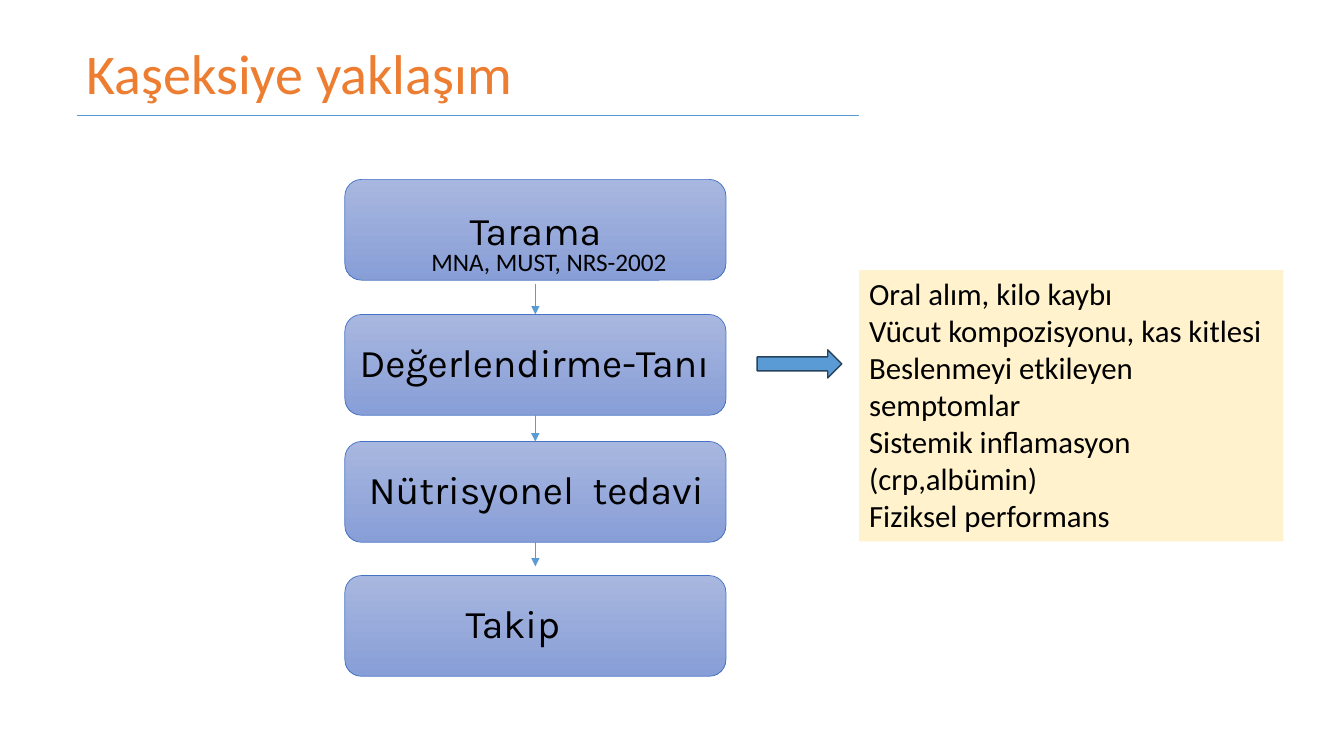
"""Build the slide on the approach to cachexia: four steps and the assessment list."""
from dataclasses import dataclass

from pptx import Presentation
from pptx.dml.color import RGBColor
from pptx.enum import shapes, text
from pptx.oxml import parse_xml
from pptx.oxml.ns import nsdecls
from pptx.util import Inches, Pt

TITLE = "Kaşeksiye yaklaşım"
TOOLS = "MNA, MUST, NRS-2002"
STEPS = [
    {"label": "Tarama", "top": 1.78, "centred": True},
    {"label": "Değerlendirme-Tanı", "top": 3.12},
    {"label": "Nütrisyonel  tedavi", "top": 4.38, "indent": 0.09},
    {"label": "Takip", "top": 5.71, "indent": 1.05},
]
ARROWS = [(2.82, 3.12), (4.12, 4.38), (5.38, 5.62)]
ASSESSMENT = [
    "Oral alım, kilo kaybı",
    "Vücut kompozisyonu, kas kitlesi",
    "Beslenmeyi etkileyen semptomlar",
    "Sistemik inflamasyon (crp,albümin)",
    "Fiziksel performans",
]
STEP_LEFT, STEP_WIDTH, STEP_HEIGHT = 3.42, 3.78, 1.0
INSET = 0.1


@dataclass(frozen=True)
class Theme:
    """Colours, fonts and type sizes of the slide."""

    ink: str = "000000"
    title: str = "ED7D31"
    accent: str = "5B9BD5"
    arrow_edge: str = "28445D"
    step_top: str = "A8B7DF"
    step_bottom: str = "889ED7"
    step_edge: str = "4472C4"
    panel: str = "FFF2CC"
    body_font: str = "Calibri"
    step_font: str = "Karla"
    title_size: int = 40
    step_size: int = 28
    list_size: int = 22
    tools_size: int = 18
    hairline: float = 0.5


THEME = Theme()


def rgb(value):
    """Return a colour from its hex value."""
    return RGBColor.from_string(value)


def place(item, left, top, width, height):
    """Move and size a placeholder in inches."""
    item.left, item.top = Inches(left), Inches(top)
    item.width, item.height = Inches(width), Inches(height)


def write(item, lines, size, color=THEME.ink, font=THEME.body_font,
          anchor=text.MSO_ANCHOR.TOP, align=text.PP_ALIGN.LEFT):
    """Fill a shape with formatted lines."""
    frame = item.text_frame
    frame.text = "\n".join(lines)
    frame.word_wrap = True
    frame.auto_size = text.MSO_AUTO_SIZE.NONE
    frame.vertical_anchor = anchor
    for paragraph in frame.paragraphs:
        paragraph.alignment = align
        paragraph.space_before = Pt(0)
        for run in paragraph.runs:
            run.font.size, run.font.name = Pt(size), font
            run.font.color.rgb = rgb(color)


def add_line(slide, start, end, arrow=False):
    """Draw a thin accent line, with an arrowhead if asked."""
    line = slide.shapes.add_connector(
        shapes.MSO_CONNECTOR.STRAIGHT, *(Inches(v) for v in (*start, *end)))
    line.line.color.rgb = rgb(THEME.accent)
    line.line.width = Pt(THEME.hairline)
    if arrow:
        line.line._get_or_add_ln().append(
            parse_xml(f'<a:tailEnd {nsdecls("a")} type="triangle"/>'))
    line._element.spPr.append(parse_xml(f'<a:effectLst {nsdecls("a")}/>'))
    return line


def add_step(slide, label, top, indent=0, centred=False):
    """Draw one rounded step box."""
    step = slide.shapes.add_shape(
        shapes.MSO_SHAPE.ROUNDED_RECTANGLE, Inches(STEP_LEFT), Inches(top),
        Inches(STEP_WIDTH), Inches(STEP_HEIGHT))
    step.shadow.inherit = False
    step.fill.gradient()
    step.fill.gradient_angle = 270
    for stop, color in zip(step.fill.gradient_stops, (THEME.step_top, THEME.step_bottom)):
        stop.color.rgb = rgb(color)
    for stop, position in zip(step.fill.gradient_stops, (0, 1)):
        stop.position = position
    step.line.color.rgb = rgb(THEME.step_edge)
    step.line.width = Pt(THEME.hairline)
    align = text.PP_ALIGN.CENTER if centred else text.PP_ALIGN.LEFT
    write(step, [label], THEME.step_size, font=THEME.step_font,
          anchor=text.MSO_ANCHOR.MIDDLE, align=align)
    step.text_frame.margin_left = Inches(INSET + indent)
    if not centred:
        paragraph = step.text_frame.paragraphs[0]
        paragraph.line_spacing, paragraph.space_before = 0.9, Pt(10)
    return step


def add_flow(slide):
    """Draw the steps and the arrows between them."""
    steps = [add_step(slide, **step) for step in STEPS]
    middle = STEP_LEFT + STEP_WIDTH / 2
    for index, (start, end) in enumerate(ARROWS):
        arrow = add_line(slide, (middle, start), (middle, end), arrow=True)
        if abs(start - STEPS[index]["top"] - STEP_HEIGHT) < 0.01:
            arrow.begin_connect(steps[index], 2)
        if abs(end - STEPS[index + 1]["top"]) < 0.01:
            arrow.end_connect(steps[index + 1], 0)
    tools = slide.shapes.add_textbox(Inches(4.18), Inches(2.39), Inches(6.66), Inches(0.4))
    write(tools, [TOOLS], THEME.tools_size)


def add_assessment(slide, panel):
    """Format the assessment list and draw the arrow that leads to it."""
    place(panel, 8.52, 2.68, 4.21, 2.69)
    panel.fill.solid()
    panel.fill.fore_color.rgb = rgb(THEME.panel)
    write(panel, ASSESSMENT, THEME.list_size)
    for paragraph in panel.text_frame.paragraphs:
        properties = paragraph._p.get_or_add_pPr()
        properties.set("marL", "0")
        properties.set("indent", "0")
        properties.append(parse_xml(f'<a:buNone {nsdecls("a")}/>'))
    pointer = slide.shapes.add_shape(
        shapes.MSO_SHAPE.RIGHT_ARROW, Inches(7.51), Inches(3.47), Inches(0.84), Inches(0.28))
    pointer.shadow.inherit = False
    pointer.fill.solid()
    pointer.fill.fore_color.rgb = rgb(THEME.accent)
    pointer.line.color.rgb = rgb(THEME.arrow_edge)
    pointer.line.width = Pt(1)


def main():
    """Build and save the slide."""
    deck = Presentation()
    deck.slide_width, deck.slide_height = Inches(13.33), Inches(7.5)
    slide = deck.slides.add_slide(deck.slide_layouts[1])
    heading, panel = slide.placeholders
    place(heading, 0.76, 0.33, 6.66, 0.77)
    write(heading, [TITLE], THEME.title_size, THEME.title)
    add_line(slide, (0.76, 1.14), (8.52, 1.14))
    add_flow(slide)
    add_assessment(slide, panel)
    deck.save("out.pptx")


if __name__ == "__main__":
    main()
